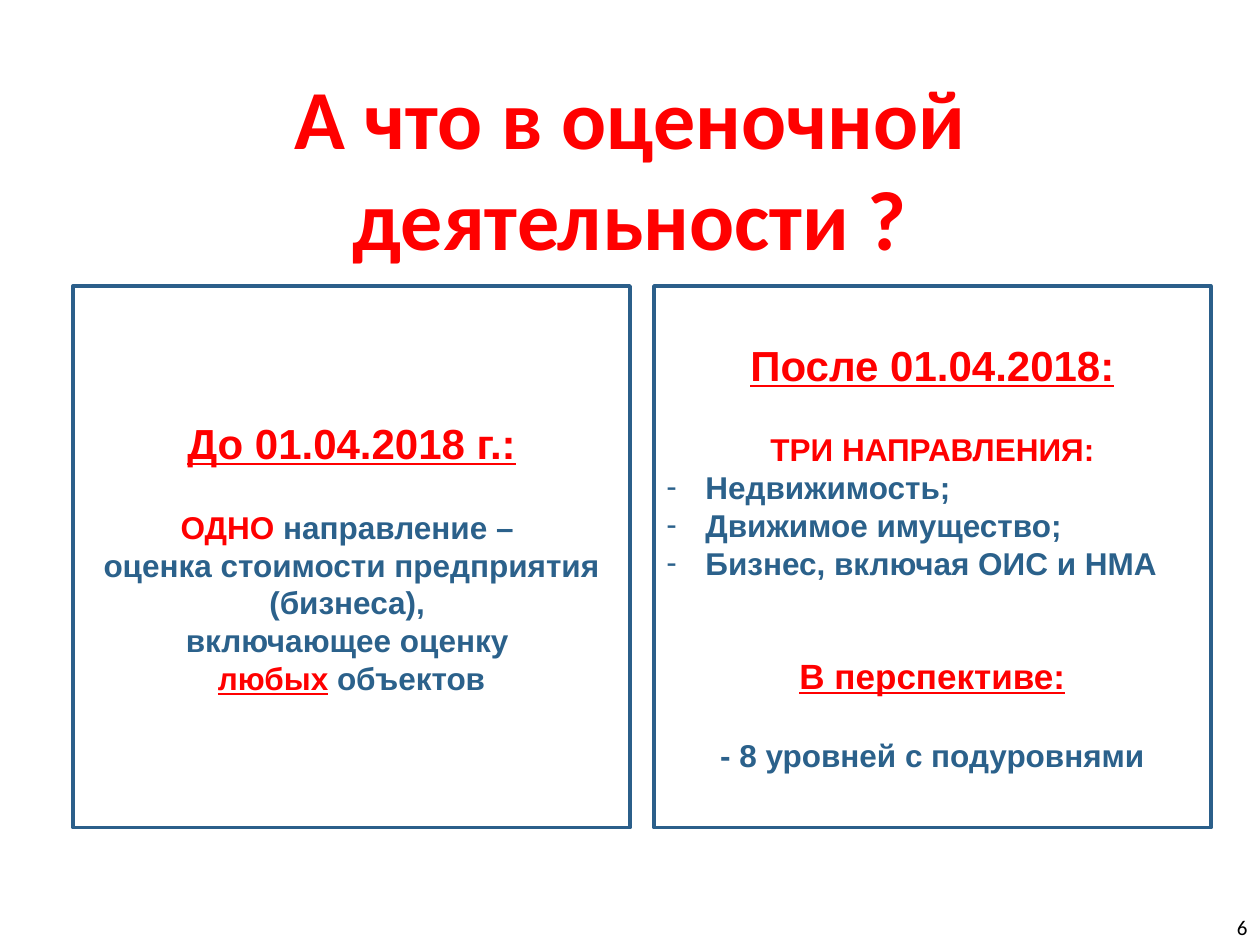
from pptx import Presentation
from pptx.dml.color import RGBColor as Rgb
from pptx.enum.shapes import MSO_SHAPE as Kind
from pptx.enum.text import MSO_ANCHOR as Anchor, PP_ALIGN as Align
from pptx.oxml.ns import qn
from pptx.util import Inches, Pt
from lxml.etree import SubElement as Sub

RED, BLUE, EDGE = "FF0000", "2B618B", "2B5F8A"
HEAD = {"size": Pt(24), "underline": True}
NEXT = {"size": Pt(20), "underline": True}
BODY = {"size": Pt(18)}
LINK = {"size": Pt(18), "underline": True}

BEFORE = [
    {"runs": [("До 01.04.2018 г.:", RED, HEAD)]},
    {"runs": [("ОДНО", RED, BODY), (" направление – ", BLUE, BODY)], "gap": 23},
    {"runs": [("оценка стоимости предприятия (бизнеса), ", BLUE, BODY)]},
    {"runs": [("включающее оценку ", BLUE, BODY)]},
    {"runs": [("любых", RED, LINK), (" объектов", BLUE, BODY)]},
]
ITEMS = ["Недвижимость;", "Движимое имущество;", "Бизнес, включая ОИС и НМА"]
AFTER = [
    {"runs": [("После 01.04.2018:", RED, HEAD)]},
    {"runs": [("ТРИ НАПРАВЛЕНИЯ:", RED, BODY)], "gap": 23},
    *[{"runs": [(item, BLUE, BODY)], "dash": True} for item in ITEMS],
    {"runs": [("В перспективе:", RED, NEXT)], "gap": 41.4},
    {"runs": [("- 8 уровней с подуровнями", BLUE, BODY)], "gap": 23},
]


def color(code):
    """Turn a hex string into a colour."""
    return Rgb.from_string(code)


def style(obj, form):
    """Set each attribute named in the format."""
    for name, value in form.items():
        setattr(obj, name, value)


def add_run(para, text, code, form):
    """Add one formatted run to a paragraph."""
    run = para.add_run()
    run.text = text
    style(run.font, {"name": "Arial", "bold": True, **form})
    run.font.color.rgb = color(code)


def add_dash(para):
    """Give a paragraph a hanging dash bullet."""
    props = para._p.get_or_add_pPr()
    props.set("marL", str(Inches(0.31)))
    props.set("indent", str(-Inches(0.31)))
    Sub(props, qn("a:buFont")).set("typeface", "Arial")
    Sub(props, qn("a:buChar")).set("char", "-")


def fill_text(frame, rows):
    """Write the rows as paragraphs of a text frame."""
    for i, row in enumerate(rows):
        para = frame.paragraphs[0] if i == 0 else frame.add_paragraph()
        dash = row.get("dash", False)
        style(para, {"alignment": Align.LEFT if dash else Align.CENTER,
                     "space_before": Pt(row.get("gap", 0))})
        if dash:
            add_dash(para)
        for run in row["runs"]:
            add_run(para, *run)


def add_panel(slide, left, rows):
    """Draw an outlined panel with its text."""
    box = slide.shapes.add_shape(Kind.RECTANGLE, Inches(left), Inches(2.27),
                                 Inches(4.42), Inches(4.3))
    box.shadow.inherit = False
    box.fill.background()
    box.line.color.rgb = color(EDGE)
    box.line.width = Pt(2)
    style(box.text_frame, {"word_wrap": True, "vertical_anchor": Anchor.MIDDLE})
    fill_text(box.text_frame, rows)


def add_label(slide, area, text, code, form, frame, align):
    """Add a text box holding one Calibri paragraph."""
    box = slide.shapes.add_textbox(*map(Inches, area))
    style(box.text_frame, {"word_wrap": True, **frame})
    para = box.text_frame.paragraphs[0]
    para.alignment = align
    add_run(para, text, code, {"name": "Calibri", **form})


def main():
    """Build and save the slide."""
    deck = Presentation()
    style(deck, {"slide_width": Inches(10), "slide_height": Inches(7.5)})
    slide = deck.slides.add_slide(deck.slide_layouts[6])
    pad = {f"margin_{side}": Inches(0.1)
           for side in ("left", "top", "right", "bottom")}
    add_label(slide, (9.42, 7.22, 0.58, 0.28), "6", "000000",
              {"size": Pt(12), "bold": False},
              {"vertical_anchor": Anchor.MIDDLE, **pad}, Align.RIGHT)
    add_label(slide, (0.39, 0.47, 9.22, 1.72), "А что в оценочной деятельности ?",
              RED, {"size": Pt(48)}, {}, Align.CENTER)
    for left, rows in ((0.58, BEFORE), (5.19, AFTER)):
        add_panel(slide, left, rows)
    deck.save("out.pptx")


if __name__ == "__main__":
    main()
